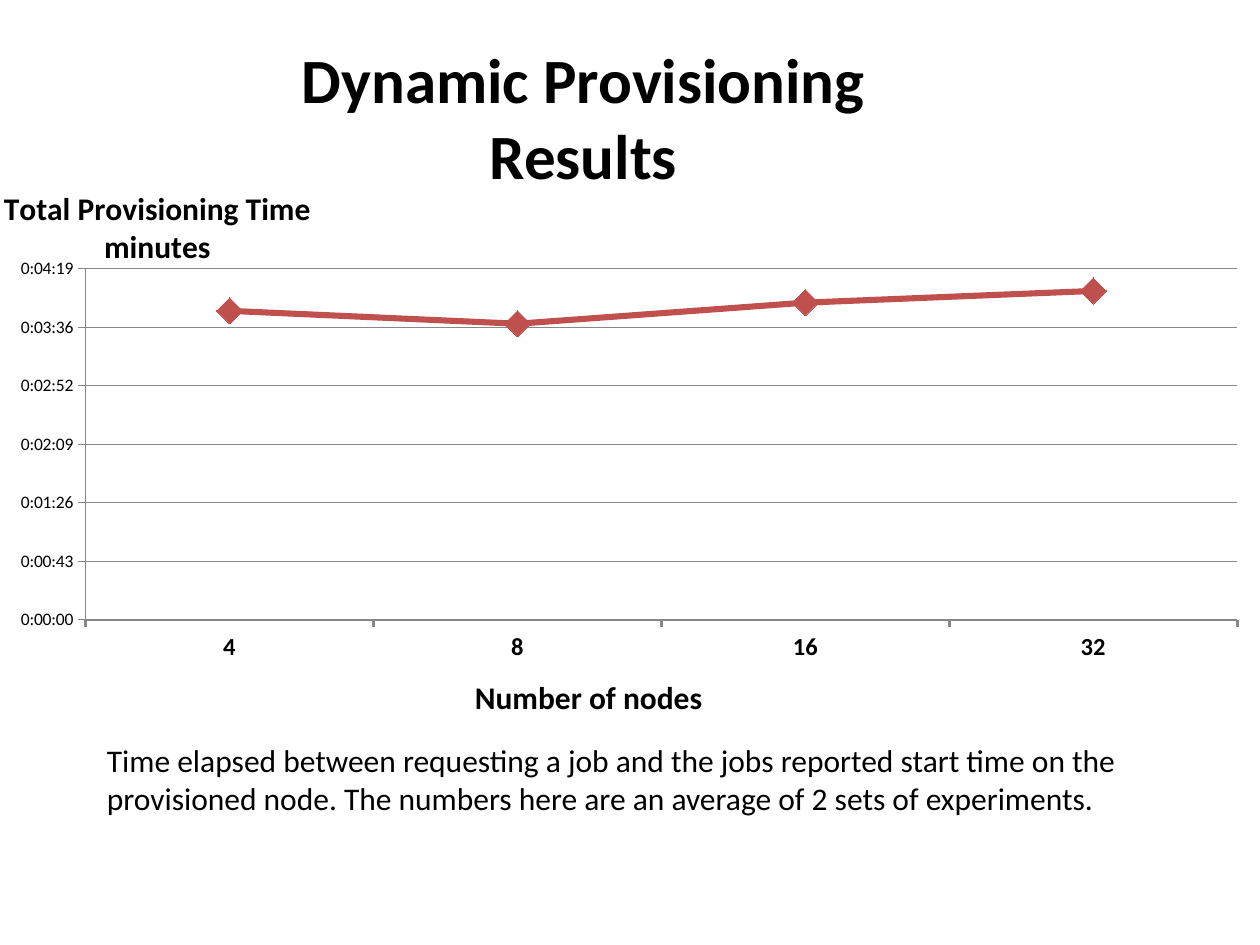
from dataclasses import dataclass

from lxml.etree import SubElement
from pptx import Presentation
from pptx.chart.data import CategoryChartData
from pptx.dml.color import RGBColor as Rgb
from pptx.enum.chart import XL_CHART_TYPE as ChartType
from pptx.enum.chart import XL_MARKER_STYLE as Marker
from pptx.enum.chart import XL_TICK_MARK as Tick
from pptx.enum.text import MSO_ANCHOR as Anchor
from pptx.enum.text import PP_ALIGN as Align
from pptx.oxml.ns import qn
from pptx.util import Inches, Pt


@dataclass(frozen=True)
class Theme:
    font: str = "Calibri"
    ink: Rgb = Rgb(0x00, 0x00, 0x00)
    grid: Rgb = Rgb(0x87, 0x87, 0x87)
    accent: Rgb = Rgb(0xC0, 0x50, 0x4D)
    heading: Pt = Pt(36)
    body: Pt = Pt(18)
    category: Pt = Pt(14)
    tick: Pt = Pt(10)


THEME = Theme()
AXIS_STEP = 0.0005  # in days, about 43 seconds
PROVISIONING_DAYS = {"4": 0.00264, "8": 0.00253, "16": 0.00271, "32": 0.00281}


def style_font(font, size, bold=False):
    font.name = THEME.font
    font.size = size
    font.bold = bold
    font.color.rgb = THEME.ink


def style_line(line, color, width):
    line.color.rgb = color
    line.width = width


def add_text(slide, box, text, size, bold=False, align=Align.LEFT,
             anchor=Anchor.TOP, wrap=True):
    frame = slide.shapes.add_textbox(*box).text_frame
    frame.word_wrap = wrap
    frame.vertical_anchor = anchor
    frame.text = text
    paragraph = frame.paragraphs[0]
    paragraph.alignment = align
    style_font(paragraph.runs[0].font, size, bold)


def set_layout(parent, position, **shares):
    """Place a chart part by shares of the chart's size."""
    layout = parent.find(qn("c:layout"))
    if layout is None:
        layout = parent.makeelement(qn("c:layout"), {})
        parent.insert(position, layout)
    for old in list(layout):
        layout.remove(old)
    manual = SubElement(layout, qn("c:manualLayout"))
    if "w" in shares:
        SubElement(manual, qn("c:layoutTarget"), val="inner")
    for mode in ("xMode", "yMode"):
        SubElement(manual, qn(f"c:{mode}"), val="edge")
    for side, share in shares.items():
        SubElement(manual, qn(f"c:{side}"), val=str(share))


def style_axes(chart):
    nodes, time = chart.category_axis, chart.value_axis
    for axis, size, bold, width in ((nodes, THEME.category, True, Pt(1.5)),
                                    (time, THEME.tick, False, Pt(0.75))):
        axis.major_tick_mark = Tick.OUTSIDE
        axis.minor_tick_mark = Tick.NONE
        style_font(axis.tick_labels.font, size, bold)
        style_line(axis.format.line, THEME.grid, width)
    time.minimum_scale = 0
    time.maximum_scale = 6 * AXIS_STEP
    time.major_unit = AXIS_STEP
    time.tick_labels.number_format = "h:mm:ss"
    time.tick_labels.number_format_is_linked = False
    time.has_major_gridlines = True
    style_line(time.major_gridlines.format.line, THEME.grid, Pt(0.75))


def style_series(chart):
    plot = chart.plots[0]
    plot.vary_by_categories = False
    provisioning = plot.series[0]
    provisioning.smooth = False
    style_line(provisioning.format.line, THEME.accent, Pt(3.5))
    marker = provisioning.marker
    marker.style = Marker.DIAMOND
    marker.size = 15
    marker.format.fill.solid()
    marker.format.fill.fore_color.rgb = THEME.accent
    style_line(marker.format.line, THEME.accent, Pt(0.75))


def add_time_chart(slide, box):
    data = CategoryChartData(number_format="h:mm:ss")
    data.categories = list(PROVISIONING_DAYS)
    data.add_series("Series 1", PROVISIONING_DAYS.values())
    chart = slide.shapes.add_chart(
        ChartType.LINE_MARKERS_STACKED, *box, data).chart
    style_font(chart.font, THEME.tick)
    chart.has_legend = False
    chart.has_title = True
    title = chart.chart_title
    title.text_frame.text = "Total Provisioning Time\nminutes"
    for paragraph in title.text_frame.paragraphs:
        style_font(paragraph.runs[0].font, THEME.body, bold=True)
    title.include_in_layout = False
    set_layout(title._element, 1, x=0, y=0.01)
    set_layout(chart.plots[0]._element.getparent(), 0,
               x=0.068, y=0.182, w=0.914, h=0.711)
    style_axes(chart)
    style_series(chart)


def main():
    deck = Presentation()
    deck.slide_width, deck.slide_height = Inches(10), Inches(7.5)
    slide = deck.slides.add_slide(deck.slide_layouts[6])

    def box(left, top, width, height):
        """Turn percentages of the slide's size into lengths."""
        across, down = deck.slide_width / 100, deck.slide_height / 100
        return (round(left * across), round(top * down),
                round(width * across), round(height * down))

    add_text(slide, box(16.7, 4, 59.2, 16.67), "Dynamic Provisioning Results",
             THEME.heading, bold=True, align=Align.CENTER, anchor=Anchor.MIDDLE)
    add_time_chart(slide, box(0, 18.93, 100, 52.27))
    add_text(slide, box(7.5, 77.73, 82.5, 9.47),
             "Time elapsed between requesting a job and the jobs reported start "
             "time on the provisioned node. The numbers here are an average of "
             "2 sets of experiments.", THEME.body)
    add_text(slide, box(36.7, 71.07, 20.2, 5.33), "Number of nodes",
             THEME.body, bold=True, wrap=False)
    deck.save("out.pptx")


if __name__ == "__main__":
    main()
